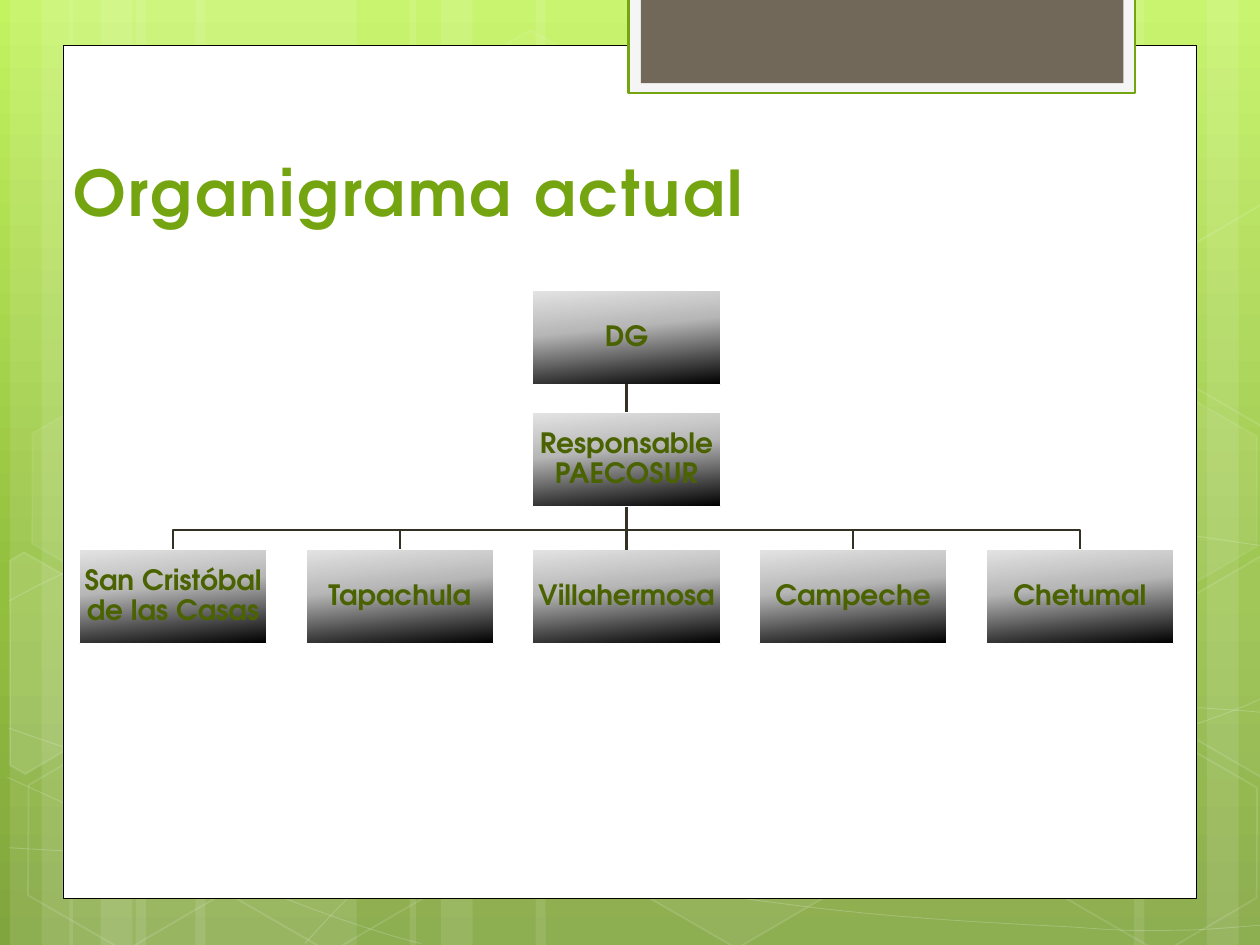
import copy
import math

import pptx
import pptx.dml.color
import pptx.enum.shapes
import pptx.enum.text
import pptx.oxml
import pptx.oxml.ns
import pptx.util

Cm, Pt = pptx.util.Cm, pptx.util.Pt
PRESETS = pptx.enum.shapes.MSO_SHAPE
qn = pptx.oxml.ns.qn

FONT = "TeX Gyre Adventor"
COLOURS = {
    "white": "FFFFFF", "black": "000000", "green": "74A510", "tab edge": "F5F5F5",
    "tab": "71685A", "link": "323124", "box text": "4A6300",
}
BACKGROUND_STOPS = [(0, "C3F35F"), (0.62, "93BF3F"), (1, "81A53E")]
BOX_STOPS = [(0, "E3E3E3"), (0.4, "B7B7B7"), (1, "000000")]

WIDTH, HEIGHT = 25.4, 19.05

# left, width
STRIPES = [
    (2.74, 4.45), (0.2, 1.27), (0.84, 2.11), (3.94, 4.45), (1.4, 1.27), (2.03, 2.11),
    (18.62, 4.45), (24.33, 1.27), (22.86, 2.11), (10.8, 7.82), (8.26, 1.27), (8.89, 2.11),
]
# start point, then two control points and an end point for each Bezier segment
CURVES = [
    [(0.18, 17.09), (1.55, 17.17), (2.92, 17.25), (4.83, 17.22), (6.73, 17.2), (9.09, 17.15),
     (11.63, 16.89), (14.17, 16.64), (17.78, 16.15), (20.12, 15.67), (22.43, 15.19),
     (24.82, 14.43), (25.58, 14)],
    [(0.18, 12.12), (0.91, 11.71), (1.65, 11.33), (3.07, 10.95), (4.52, 10.57), (6.58, 9.98),
     (8.81, 9.83), (11.07, 9.68), (13.82, 9.63), (16.61, 9.83), (19.41, 10.03),
     (24.05, 10.82), (25.58, 11.02)],
    [(0.15, 15.67), (3.23, 17.07), (6.27, 18.47), (8.48, 19.02)],
    [(0.18, 14.68), (0.97, 14.96), (1.78, 15.24), (3.25, 15.65), (4.72, 16.03), (6.93, 16.66),
     (9.07, 17.09), (11.18, 17.53), (13.84, 17.98), (15.95, 18.24), (18.06, 18.52),
     (20.32, 18.62), (21.67, 18.69), (22.99, 18.8), (23.34, 18.75), (24, 18.75),
     (24.66, 18.72), (25.12, 18.67), (25.58, 18.64)],
    [(6.15, 19.02), (6.6, 18.52), (7.06, 18.01), (7.67, 17.55), (8.28, 17.09), (9.14, 16.59),
     (9.86, 16.23), (10.57, 15.88), (11, 15.72), (11.94, 15.47), (12.85, 15.21),
     (14.55, 14.86), (15.44, 14.68), (16.36, 14.5), (16.48, 14.5), (17.27, 14.45),
     (18.03, 14.38), (19.3, 14.3), (20.17, 14.27), (21.06, 14.25), (22.5, 14.27),
     (22.5, 14.27), (22.5, 14.27), (24.21, 14.27), (24.21, 14.27), (24.66, 14.3),
     (25.1, 14.33), (25.32, 14.35), (25.55, 14.38), (25.48, 14.35), (25.55, 14.38)],
]
# left, top, fill opacity, line opacity (percent)
HEXAGONS = [
    (8.48, 0.91, 4, 8), (12.62, 14.96, 6, 12), (0.28, 15.01, 0, 12), (0.36, 7.92, 7, 8),
    (4.42, 15.04, 0, 12), (19.13, 11.51, 10, 12), (21.18, 15.06, 0, 12), (21.18, 7.98, 7, 8),
]
TILT = 30
LEFT_CUT = [(0.2, 11.3), (0.48, 11.13), (2.44, 12.24), (2.41, 14.48), (0.51, 15.6), (0.2, 15.42)]
RIGHT_CUT = [(23.52, 12.32), (25.43, 11.2), (25.63, 11.33), (25.63, 15.57), (25.45, 15.67),
             (23.52, 14.55)]
UPPER_RIGHT_CUT = [(x, y - 7.08) for x, y in RIGHT_CUT]
# points as seen, centre of rotation, fill opacity
CUT_HEXAGONS = [
    (LEFT_CUT, (0.91, 13.59), 10), (RIGHT_CUT, (25.02, 13.21), 4),
    (UPPER_RIGHT_CUT, (25.02, 6.13), 0),
]

BOX_WIDTH, BOX_HEIGHT = 3.78, 1.89
FIRST_LEFT, COLUMN_STEP = 1.6, 4.57
HEAD_TOP, MANAGER_TOP, OFFICE_TOP, BRANCH_Y = 5.86, 8.32, 11.08, 10.69
OFFICES = ["San Cristóbal de las Casas", "Tapachula", "Villahermosa", "Campeche", "Chetumal"]


def set_colour(colour_format, name):
    colour_format.rgb = pptx.dml.color.RGBColor.from_string(COLOURS[name])


def set_opacity(fill_parent, percent):
    """Make the solid fill directly inside an spPr or a:ln element translucent."""
    if percent < 100:
        colour = fill_parent.find(qn("a:solidFill"))[0]
        colour.append(colour.makeelement(qn("a:alpha"), {"val": str(percent * 1000)}))


def set_gradient(fill, owner, stops, angle):
    """Give a fill three stops at a clockwise angle; owner is the element that holds it."""
    fill.gradient()
    fill.gradient_angle = 360 - angle
    last_stop = owner.findall(".//" + qn("a:gs"))[-1]
    last_stop.addnext(copy.deepcopy(last_stop))
    for stop, (position, colour) in zip(fill.gradient_stops, stops):
        stop.position = position
        stop.color.rgb = pptx.dml.color.RGBColor.from_string(colour)


def paint(shape, fill=None, line=None, width=1, fill_opacity=100, line_opacity=100):
    shape.shadow.inherit = False
    properties = shape.element.spPr
    if fill and fill_opacity:
        shape.fill.solid()
        set_colour(shape.fill.fore_color, fill)
        set_opacity(properties, fill_opacity)
    else:
        shape.fill.background()
    if line:
        shape.line.width = Pt(width)
        set_colour(shape.line.color, line)
        set_opacity(properties.find(qn("a:ln")), line_opacity)
    else:
        shape.line.fill.background()


def add_preset(slide, preset, left, top, width, height):
    return slide.shapes.add_shape(preset, Cm(left), Cm(top), Cm(width), Cm(height))


def add_outline(slide, points, close=False):
    start, *rest = [(Cm(x), Cm(y)) for x, y in points]
    builder = slide.shapes.build_freeform(*start)
    builder.add_line_segments(rest, close=close)
    return builder.convert_to_shape()


def add_curve(slide, nodes):
    """Draw the nodes as an outline, then join each three line segments into one Bezier."""
    curve = add_outline(slide, nodes)
    lines = curve.element.findall(".//" + qn("a:lnTo"))
    for first in range(0, len(lines), 3):
        bezier = lines[first].makeelement(qn("a:cubicBezTo"), {})
        lines[first].addprevious(bezier)
        for line in lines[first:first + 3]:
            bezier.append(line[0])
            line.getparent().remove(line)
    return curve


def turn_back(points, centre):
    """Undo the tilt, so that the shape's own rotation brings the points into place."""
    cosine, sine = math.cos(math.radians(TILT)), math.sin(math.radians(TILT))
    offsets = [(x - centre[0], y - centre[1]) for x, y in points]
    return [(centre[0] + dx * cosine + dy * sine, centre[1] + dy * cosine - dx * sine)
            for dx, dy in offsets]


def add_backdrop(slide):
    set_gradient(slide.background.fill, slide.element, BACKGROUND_STOPS, 90)
    for left, width in STRIPES:
        stripe = add_preset(slide, PRESETS.RECTANGLE, left, 0, width, HEIGHT)
        paint(stripe, "white", fill_opacity=10)
    for nodes in CURVES:
        paint(add_curve(slide, nodes), line="white", width=0.5, line_opacity=20)
    for left, top, fill_opacity, line_opacity in HEXAGONS:
        hexagon = add_preset(slide, PRESETS.HEXAGON, left, top, 4.45, 3.86)
        hexagon.adjustments[0] = 0.285
        hexagon.rotation = TILT
        paint(hexagon, "white", "white", 1, fill_opacity, line_opacity)
    for points, centre, fill_opacity in CUT_HEXAGONS:
        cut_hexagon = add_outline(slide, turn_back(points, centre), close=True)
        cut_hexagon.rotation = TILT
        paint(cut_hexagon, "white", "white", 1, fill_opacity, 12)


def add_page(slide):
    paint(add_preset(slide, PRESETS.RECTANGLE, 1.27, 0.91, 22.86, 17.2), "white", "black", 0.5)
    paint(add_preset(slide, PRESETS.RECTANGLE, 12.67, -0.05, 10.21, 1.93), "tab edge", "green", 1.25)
    paint(add_preset(slide, PRESETS.RECTANGLE, 12.92, -0.05, 9.73, 1.73), "tab")


def format_run(run, size, colour):
    run.font.name = FONT
    run.font.size = Pt(size)
    run.font.bold = True
    set_colour(run.font.color, colour)


def place_title(slide, text):
    title = slide.shapes.title
    title.element.getparent().append(title.element)  # in front of the page
    title.left, title.top, title.width, title.height = Cm(1.22), Cm(1.57), Cm(22.86), Cm(3.18)
    title.text_frame.text = text
    title.text_frame.vertical_anchor = pptx.enum.text.MSO_ANCHOR.BOTTOM
    heading = title.text_frame.paragraphs[0]
    heading.alignment = pptx.enum.text.PP_ALIGN.LEFT
    format_run(heading.runs[0], 36, "green")
    heading.runs[0].font._element.set("spc", "150")


def add_box(slide, text, column, top):
    box = add_preset(slide, PRESETS.RECTANGLE, FIRST_LEFT + column * COLUMN_STEP, top,
                     BOX_WIDTH, BOX_HEIGHT)
    paint(box, line="white", width=0.75)
    set_gradient(box.fill, box.element, BOX_STOPS, 84)
    frame = box.text_frame
    frame.text = text
    frame.word_wrap = True
    frame.vertical_anchor = pptx.enum.text.MSO_ANCHOR.MIDDLE
    frame.margin_left = frame.margin_right = frame.margin_top = frame.margin_bottom = Cm(0.03)
    label = frame.paragraphs[0]
    label.alignment = pptx.enum.text.PP_ALIGN.CENTER
    label.line_spacing = 0.9
    format_run(label.runs[0], 16, "box text")
    return box


def add_trunk(slide, head, office):
    trunk = slide.shapes.add_connector(pptx.enum.shapes.MSO_CONNECTOR.STRAIGHT, 0, 0, 0, 0)
    trunk.begin_connect(head, 2)
    trunk.end_connect(office, 0)
    trunk.line.width = Pt(1.25)
    set_colour(trunk.line.color, "link")
    properties = trunk.element.spPr
    properties.append(properties.makeelement(qn("a:effectLst"), {}))


def add_organisation(slide):
    middle = len(OFFICES) // 2
    centres = [FIRST_LEFT + column * COLUMN_STEP + BOX_WIDTH / 2 for column in range(len(OFFICES))]
    for centre in centres[:middle] + centres[middle + 1:]:
        branch = add_outline(slide, [(centres[middle], HEAD_TOP + BOX_HEIGHT),
                                     (centres[middle], BRANCH_Y), (centre, BRANCH_Y),
                                     (centre, OFFICE_TOP)])
        paint(branch, line="link", width=1.25)
    head = add_box(slide, "DG", middle, HEAD_TOP)
    offices = [add_box(slide, name, column, OFFICE_TOP) for column, name in enumerate(OFFICES)]
    add_trunk(slide, head, offices[middle])
    add_box(slide, "Responsable PAECOSUR", middle, MANAGER_TOP)


def main():
    presentation = pptx.Presentation()
    presentation.slide_width, presentation.slide_height = Cm(WIDTH), Cm(HEIGHT)
    slide = presentation.slides.add_slide(presentation.slide_layouts[5])
    add_backdrop(slide)
    add_page(slide)
    place_title(slide, "Organigrama actual")
    add_organisation(slide)
    presentation.save("out.pptx")


if __name__ == "__main__":
    main()
